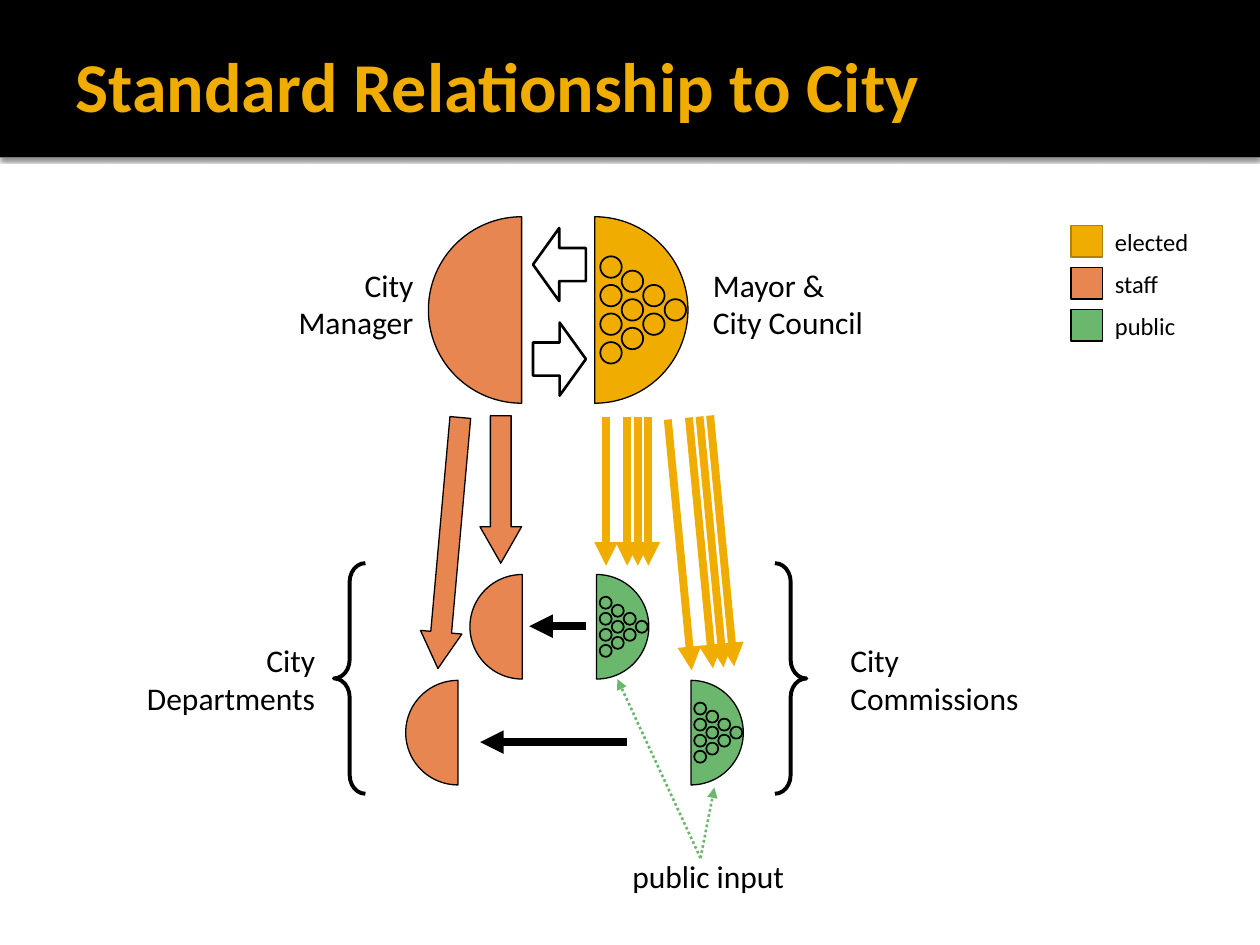
from dataclasses import dataclass

from lxml.etree import SubElement
from pptx import Presentation
from pptx.dml.color import RGBColor
from pptx.enum.dml import MSO_LINE
from pptx.enum.shapes import MSO_CONNECTOR, MSO_SHAPE
from pptx.enum.text import MSO_ANCHOR, PP_ALIGN
from pptx.oxml.ns import qn
from pptx.util import Inches, Pt

CELL = Inches(0.1)
COLUMNS, ROWS = 100, 75
FONT = "Calibri"
BLACK = RGBColor(0x00, 0x00, 0x00)
WHITE = RGBColor(0xFF, 0xFF, 0xFF)
ELECTED = RGBColor(0xF0, 0xAD, 0x00)
ELECTED_EDGE = RGBColor(0xB2, 0x80, 0x00)
STAFF = RGBColor(0xE8, 0x86, 0x51)
PUBLIC = RGBColor(0x6B, 0xB7, 0x6D)


@dataclass(frozen=True)
class Box:
    """A rectangle measured in grid columns and rows."""
    left: float
    top: float
    width: float
    height: float

    def inner(self, left, top, width, height):
        """Return a box placed relative to this one."""
        return Box(self.left + left, self.top + top, width, height)

    def point(self, column, row):
        """Return a slide position for an offset inside this box."""
        return round((self.left + column) * CELL), round((self.top + row) * CELL)

    def frame(self):
        """Return left, top, width and height as slide lengths."""
        return (*self.point(0, 0), round(self.width * CELL), round(self.height * CELL))


def add_figure(shapes, kind, box, fill=None, edge=BLACK, weight=0.75, adjust=()):
    """Add a preset shape with flat fill and outline."""
    figure = shapes.add_shape(kind, *box.frame())
    figure.shadow.inherit = False
    if fill is None:
        figure.fill.background()
    else:
        figure.fill.solid()
        figure.fill.fore_color.rgb = fill
    if edge is None:
        figure.line.fill.background()
    else:
        figure.line.color.rgb = edge
        figure.line.width = Pt(weight)
    for index, value in enumerate(adjust):
        figure.adjustments[index] = value
    return figure


def add_label(page, box, lines, size=18, align=PP_ALIGN.LEFT, wrap=False):
    """Add a text box with one paragraph per line."""
    frame = page.shapes.add_textbox(*box.frame()).text_frame
    frame.word_wrap = wrap
    frame.text = "\n".join(lines)
    for para in frame.paragraphs:
        para.alignment = align
        para.font.name = FONT
        para.font.size = Pt(size)
        para.font.color.rgb = BLACK


def add_arrow(shapes, start, end, color, weight=4.5, dash=None):
    """Add a straight line with a triangular head at its end."""
    arrow = shapes.add_connector(MSO_CONNECTOR.STRAIGHT, *start, *end)
    arrow.line.color.rgb = color
    arrow.line.width = Pt(weight)
    if dash is not None:
        arrow.line.dash_style = dash
    properties = arrow.element.spPr
    SubElement(properties.find(qn("a:ln")), qn("a:tailEnd"), type="triangle")
    SubElement(properties, qn("a:effectLst"))


def add_staff_half(page, box):
    """Add the left half of a disc for staff."""
    add_figure(page.shapes, MSO_SHAPE.CHORD, box, STAFF, adjust=(54, 162))


def add_member_half(page, box, fill):
    """Add the right half of a disc with its triangle of ten members."""
    add_figure(page.shapes, MSO_SHAPE.CHORD, box, fill, adjust=(162, 54))
    members = page.shapes.add_group_shape().shapes
    size = 0.115 * box.width
    pitch = size * 4 / 3
    for column in range(4):
        count = 4 - column
        for row in range(count):
            left = 0.53 * box.width + column * size
            top = (box.height - size) / 2 + (row - (count - 1) / 2) * pitch
            spot = box.inner(left, top, size, size)
            add_figure(members, MSO_SHAPE.OVAL, spot, fill, weight=1)


def add_fan(page, box, step):
    """Add four parallel arrows along the run of a box, the first set apart."""
    arrows = page.shapes.add_group_shape().shapes
    for place in (0, 2, 3, 4):
        column, row = place * step[0], place * step[1]
        add_arrow(arrows, box.point(column, row),
                  box.point(column + box.width, row + box.height), ELECTED)


def add_header(page, box):
    """Add the black title band with its shadow and set the title."""
    title = page.shapes.title
    strip = add_figure(page.shapes, MSO_SHAPE.RECTANGLE,
                       box.inner(0, 12, box.width, 0.5), WHITE, None)
    shadow = SubElement(strip.element.spPr.find(qn("a:effectLst")), qn("a:outerShdw"),
                        blurRad=str(Pt(2.5)), dist=str(Pt(0.8)), dir="5400000",
                        algn="t", rotWithShape="0")
    tint = SubElement(shadow, qn("a:srgbClr"), val=str(BLACK))
    SubElement(tint, qn("a:alpha"), val="60000")
    band = add_figure(page.shapes, MSO_SHAPE.RECTANGLE, box, BLACK, None)
    for part in (strip, band):
        title.element.addprevious(part.element)

    title.left, title.top, title.width, title.height = box.inner(5, 1.7, 90, 10).frame()
    frame = title.text_frame
    frame.text = "Standard Relationship to City"
    frame.vertical_anchor = MSO_ANCHOR.MIDDLE
    frame.margin_left = Inches(0.1)
    frame.margin_right = frame.margin_top = frame.margin_bottom = Inches(0.05)
    para = frame.paragraphs[0]
    para.alignment = PP_ALIGN.LEFT
    para.font.name = FONT
    para.font.size = Pt(40)
    para.font.bold = True
    para.font.color.rgb = ELECTED


def add_offices(page, box):
    """Add the manager and the council with the exchange between them."""
    add_label(page, box.inner(0, 3.4, 11.2, 7), ("City", "Manager"), align=PP_ALIGN.RIGHT)
    add_label(page, box.inner(33, 3.4, 14, 7), ("Mayor &", "City Council"))
    add_staff_half(page, box.inner(11.4, 0, 14.8, 14.8))
    add_member_half(page, box.inner(17.2, 0, 14.8, 14.8), ELECTED)
    for kind, top in ((MSO_SHAPE.LEFT_ARROW, 0.9), (MSO_SHAPE.RIGHT_ARROW, 8.4)):
        add_figure(page.shapes, kind, box.inner(19.7, top, 4.2, 5.8),
                   weight=1.5, adjust=(0.452, 0.496))


def add_delegation(page, box):
    """Add the arrows leading from the offices to the bodies below."""
    for left, top, height, turn in ((4.1, 0, 11.7, 0), (0, 0.1, 20, 5.1)):
        arrow = add_figure(page.shapes, MSO_SHAPE.DOWN_ARROW,
                           box.inner(left, top, 3.3, height), STAFF, adjust=(0.5, 0.875))
        arrow.rotation = turn
    add_fan(page, box.inner(14.1, 0.1, 0, 11.8), (0.84, 0))
    add_fan(page, box.inner(19, 0.3, 1.9, 19.9), (0.84, -0.08))


def add_bodies(page, box):
    """Add departments, commissions and the public input they receive."""
    add_label(page, box.inner(0, 5.7, 15.4, 7), ("City", "Departments"),
              align=PP_ALIGN.RIGHT)
    add_label(page, box.inner(55.9, 5.7, 15.4, 7), ("City", "Commissions"))
    for kind, left in ((MSO_SHAPE.LEFT_BRACE, 15.9), (MSO_SHAPE.RIGHT_BRACE, 50.9)):
        add_figure(page.shapes, kind, box.inner(left, 0, 2.5, 18.3),
                   weight=2.25, adjust=(0.592, 0.5))
    for department, commission, top in ((26.7, 32.6, 0.9), (21.6, 40.1, 9.3)):
        add_staff_half(page, box.inner(department, top, 8.3, 8.3))
        add_member_half(page, box.inner(commission, top, 8.3, 8.3), PUBLIC)
    for start, end, row in ((35.9, 31.4, 5), (39.2, 27.5, 14.2)):
        add_arrow(page.shapes, box.point(start, row), box.point(end, row), BLACK)
    for target in ((46.1, 17.8), (38.4, 9.2)):
        add_arrow(page.shapes, box.point(45, 23.4), box.point(*target),
                  PUBLIC, 1.5, MSO_LINE.ROUND_DOT)
    add_label(page, box.inner(38.6, 22.8, 17.8, 4), ("public input",), wrap=True)


def add_legend(page, box):
    """Add a colour swatch and a name for each kind of actor."""
    entries = (("elected", ELECTED, ELECTED_EDGE, 1, 8),
               ("staff", STAFF, BLACK, 0.75, 5.7),
               ("public", PUBLIC, BLACK, 0.75, 6.9))
    pitch = box.height / len(entries)
    for index, (name, fill, edge, weight, width) in enumerate(entries):
        top = index * pitch
        add_figure(page.shapes, MSO_SHAPE.RECTANGLE,
                   box.inner(0, top + 0.4, 2.5, 2.5), fill, edge, weight)
        add_label(page, box.inner(2.5, top, width, 3.4), (name,), size=14)


def main():
    """Build the deck and save it."""
    deck = Presentation()
    deck.slide_width, deck.slide_height = COLUMNS * CELL, ROWS * CELL
    page = deck.slides.add_slide(deck.slide_layouts[5])
    add_header(page, Box(0, 0, COLUMNS, 12.5))
    add_offices(page, Box(22.6, 17.2, 47, 14.8))
    add_delegation(page, Box(34, 33, 25, 20))
    add_bodies(page, Box(10.6, 44.7, 71.3, 26.8))
    add_legend(page, Box(85, 17.5, 10.5, 10))
    deck.save("out.pptx")


if __name__ == "__main__":
    main()
